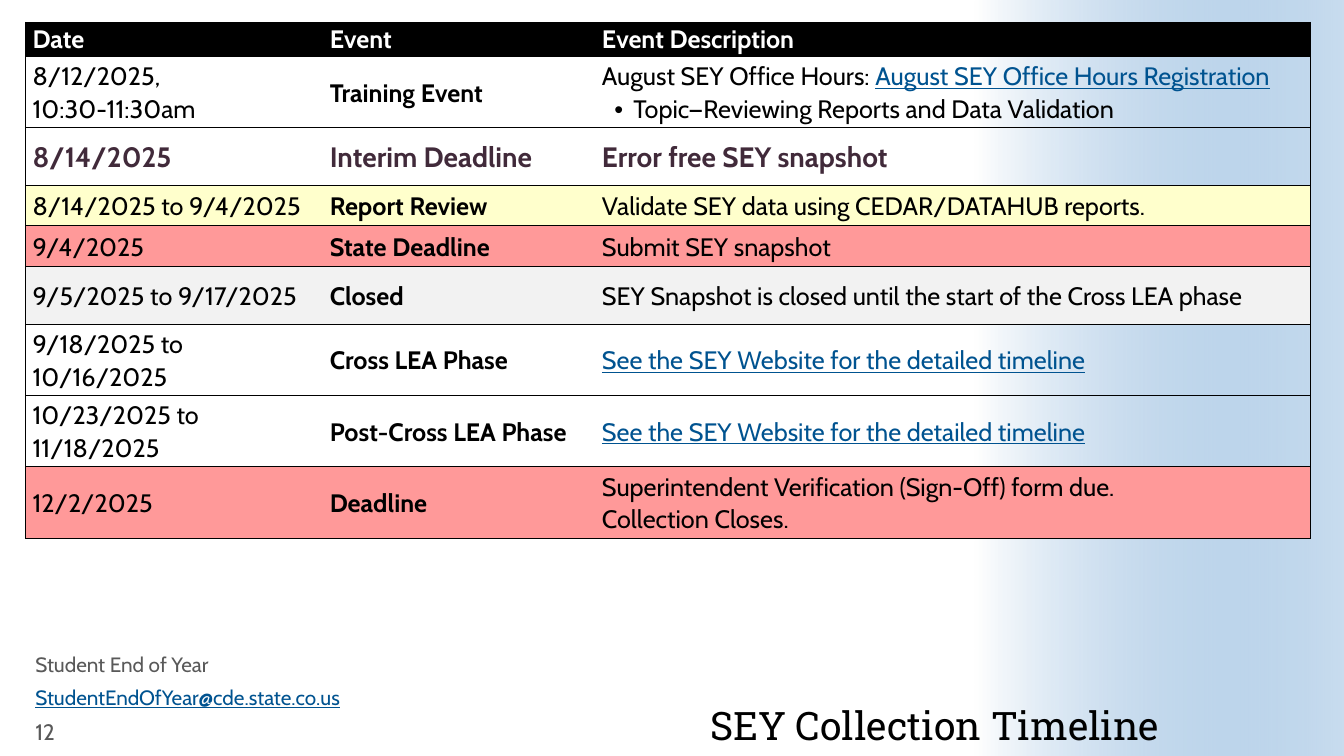
import pptx
import pptx.util
import pptx.dml.color
import pptx.enum.shapes
import pptx.enum.text
from lxml import etree

Cm, Pt = pptx.util.Cm, pptx.util.Pt
ALIGN, ANCHOR = pptx.enum.text.PP_ALIGN, pptx.enum.text.MSO_ANCHOR
NS = "http://schemas.openxmlformats.org/drawingml/2006/main"
COLORS = {"black": "000000", "white": "FFFFFF", "link": "005390", "gray": "595959",
          "plum": "412A3A", "yellow": "FFFFCC", "red": "FF9999", "pale": "F2F2F2",
          "blue": "488BC9"}


def rgb(name):
    return pptx.dml.color.RGBColor.from_string(COLORS[name])


def put(para, text, size=18, font="Cabin", color="black", bold=False, line=False):
    for i, part in enumerate(text.split("\n")):
        if i:
            para.add_line_break()
        run = para.add_run()
        run.text = part
        run.font.size, run.font.name = Pt(size), font
        run.font.bold, run.font.underline = bold, line
        run.font.color.rgb = rgb(color)


deck = pptx.Presentation()
deck.slide_width, deck.slide_height = Cm(33.87), Cm(19.05)
slide = deck.slides.add_slide(deck.slide_layouts[6])

# Blue fade on the right, turned a quarter
band = slide.shapes.add_shape(pptx.enum.shapes.MSO_SHAPE.RECTANGLE,
                              Cm(19.69), Cm(4.88), Cm(19.05), Cm(9.3))
band.rotation = 270
band.shadow.inherit = False
band.line.fill.background()
band.fill.gradient()
grad = band.fill._xPr.find(f"{{{NS}}}gradFill")
grad.set("rotWithShape", "1")
for child in list(grad):
    grad.remove(child)
grad.extend(etree.fromstring(
    f'<a:g xmlns:a="{NS}"><a:gsLst>'
    f'<a:gs pos="0"><a:srgbClr val="{COLORS["white"]}"/></a:gs>'
    f'<a:gs pos="100000"><a:srgbClr val="{COLORS["blue"]}"><a:alpha val="30000"/></a:srgbClr></a:gs>'
    '</a:gsLst><a:lin ang="5400000" scaled="0"/></a:g>'))

# Timeline rows: height, fill, date, event, description
site = "See the SEY Website for the detailed timeline"
rows = [
    (0.86, "black", "Date", "Event", "Event Description"),
    (1.8, None, "8/12/2025, \n10:30-11:30am", "Training Event", "August SEY Office Hours: "),
    (1.45, None, "8/14/2025", "Interim Deadline", "Error free SEY snapshot"),
    (1.02, "yellow", "8/14/2025 to 9/4/2025", "Report Review",
     "Validate SEY data using CEDAR/DATAHUB reports."),
    (1.02, "red", "9/4/2025", "State Deadline", "Submit SEY snapshot"),
    (1.45, "pale", "9/5/2025 to 9/17/2025", "Closed",
     "SEY Snapshot is closed until the start of the Cross LEA phase"),
    (1.8, None, "9/18/2025 to 10/16/2025", "Cross LEA Phase", site),
    (1.8, None, "10/23/2025 to 11/18/2025", "Post-Cross LEA Phase", site),
    (1.8, "red", "12/2/2025", "Deadline",
     "Superintendent Verification (Sign-Off) form due. \nCollection Closes."),
]
special = {"Date": {"color": "white", "bold": True},
           "8/14/2025": {"size": 20, "color": "plum", "bold": True}}
link = {"color": "link", "line": True}

frame = slide.shapes.add_table(len(rows), 3, Cm(0.64), Cm(0.56), Cm(32.38), Cm(13))
table = frame.table
table._tbl.tblPr.find(f"{{{NS}}}tableStyleId").text = "{2D5ABB26-0587-4C30-8999-92F81FD0307C}"
table.horz_banding = False
for col, width in zip(table.columns, (7.49, 6.86, 18.03)):
    col.width = Cm(width)

for r, (height, shade, *texts) in enumerate(rows):
    table.rows[r].height = Cm(height)
    for c, text in enumerate(texts):
        cell = table.cell(r, c)
        cell.margin_left = cell.margin_right = Cm(0.18)
        cell.margin_top = cell.margin_bottom = 0
        cell.vertical_anchor = ANCHOR.MIDDLE if r else ANCHOR.TOP
        # Outer frame and row rules
        props = cell._tc.get_or_add_tcPr()
        for side, shown in (("L", c == 0), ("R", c == 2), ("T", True), ("B", True)):
            if shown:
                props.append(etree.fromstring(
                    f'<a:ln{side} xmlns:a="{NS}" w="6350"><a:solidFill>'
                    f'<a:srgbClr val="{COLORS["black"]}"/></a:solidFill></a:ln{side}>'))
        if shade:
            cell.fill.solid()
            cell.fill.fore_color.rgb = rgb(shade)
        else:
            cell.fill.background()
        para = cell.text_frame.paragraphs[0]
        para.line_spacing = 1.07
        look = special.get(texts[0], {"bold": c == 1})
        put(para, text, **(link if text == site else look))

# Link and bullet under the training event
hours = table.cell(1, 2).text_frame
put(hours.paragraphs[0], "August SEY Office Hours Registration", **link)
topic = hours.add_paragraph()
topic.line_spacing = 1.07
props = topic._p.get_or_add_pPr()
props.set("marL", str(Cm(0.79)))
props.set("indent", str(-Cm(0.48)))
props.append(etree.fromstring(f'<a:buFont xmlns:a="{NS}" typeface="Arial"/>'))
props.append(etree.fromstring(f'<a:buChar xmlns:a="{NS}" char="•"/>'))
put(topic, "Topic—Reviewing Reports and Data Validation")

# Title and footer: text, box, anchor, line spacing, format
notes = [
    ("SEY Collection Timeline", (10.82, 16.38, 18.39, 2.49), ANCHOR.BOTTOM, 0.9,
     {"size": 28, "font": "Roboto Slab"}),
    ("Student End of Year", (0.64, 16.43, 9.88, 0.79), ANCHOR.TOP, 0.8,
     {"size": 14.8, "color": "gray"}),
    ("StudentEndOfYear@cde.state.co.us", (0.64, 17.25, 9.88, 0.79), ANCHOR.TOP, 0.8,
     {"size": 14.8, **link}),
    ("12", (0.64, 18.03, 2.16, 0.79), ANCHOR.MIDDLE, 1.0, {"size": 16, "color": "gray"}),
]
for text, place, anchor, space, look in notes:
    body = slide.shapes.add_textbox(*map(Cm, place)).text_frame
    body.word_wrap = True
    body.vertical_anchor = anchor
    para = body.paragraphs[0]
    para.line_spacing = space
    if anchor == ANCHOR.BOTTOM:
        body.margin_left = body.margin_right = body.margin_top = body.margin_bottom = 0
        para.alignment = ALIGN.RIGHT
    put(para, text, **look)

deck.save("out.pptx")
